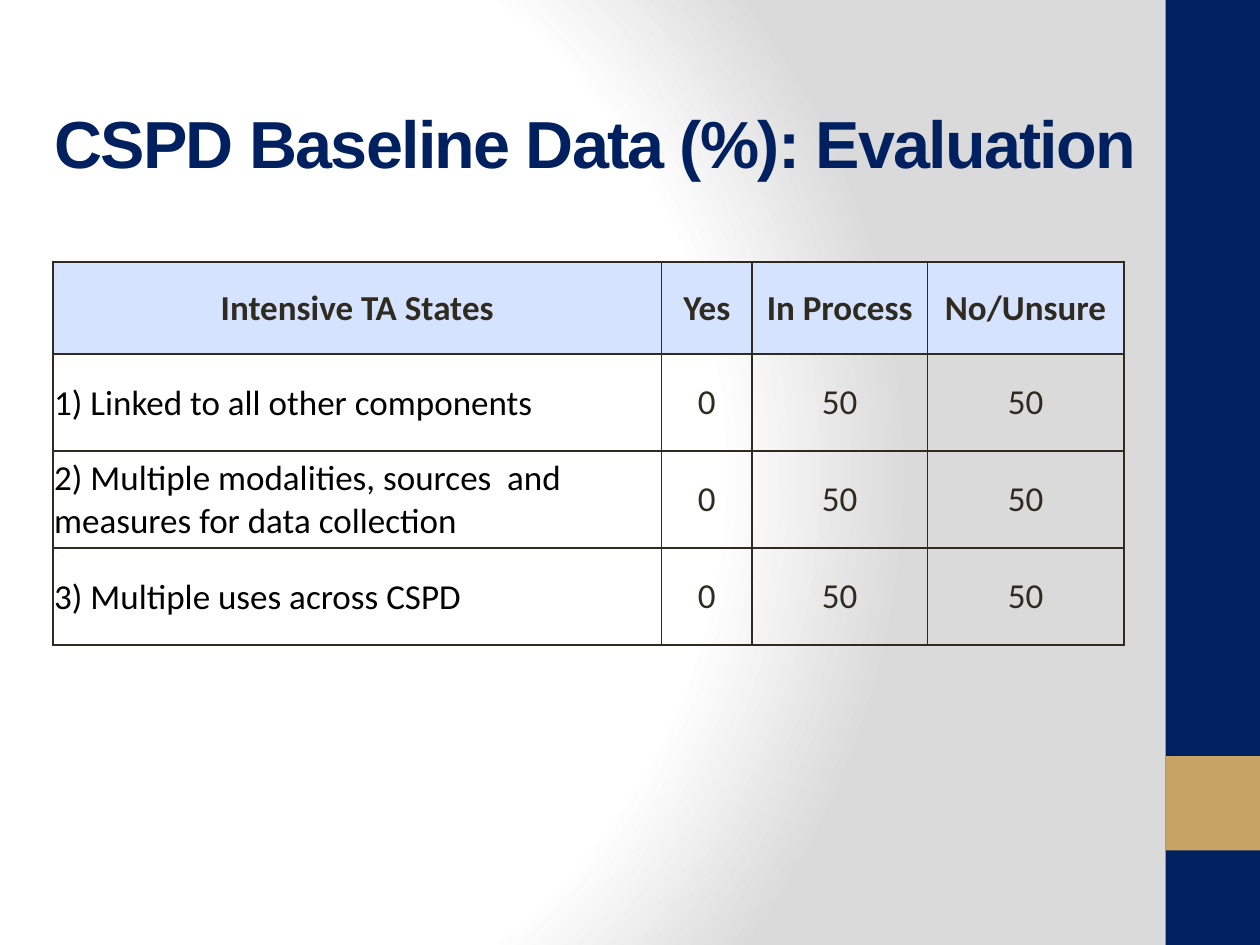
import pptx
import pptx.dml.color
import pptx.enum.shapes
import pptx.enum.text
import pptx.oxml
import pptx.oxml.ns
import pptx.util

Inches, Pt = pptx.util.Inches, pptx.util.Pt
RGBColor = pptx.dml.color.RGBColor
PP_ALIGN = pptx.enum.text.PP_ALIGN
MIDDLE = pptx.enum.text.MSO_ANCHOR.MIDDLE

NAVY = RGBColor(0x00, 0x20, 0x60)
GOLD = RGBColor(0xC8, 0xA4, 0x64)
INK = RGBColor(0x2F, 0x2B, 0x20)
BLACK = RGBColor(0x00, 0x00, 0x00)
WHITE = RGBColor(0xFF, 0xFF, 0xFF)
GREY = RGBColor(0xDA, 0xDA, 0xDA)
HEADER_BLUE = RGBColor(0xD6, 0xE3, 0xFF)

NS = pptx.oxml.ns.nsdecls("a", "p")
ROWS = [
    ["Intensive TA States", "Yes", "In Process", "No/Unsure"],
    ["1) Linked to all other components", "0", "50", "50"],
    ["2) Multiple modalities, sources  and measures for data collection", "0", "50", "50"],
    ["3) Multiple uses across CSPD", "0", "50", "50"],
]


class SlideBuilder:
    title_font = "Arial"
    table_font = "Calibri"

    def __init__(self, prs):
        self.slide = prs.slides.add_slide(prs.slide_layouts[5])

    def background(self, stops):
        """Fill the slide with a circular gradient of (percent, colour) stops."""
        gs = "".join(
            f'<a:gs pos="{pos * 1000}"><a:srgbClr val="{color}"/></a:gs>'
            for pos, color in stops
        )
        bg = pptx.oxml.parse_xml(
            f'<p:bg {NS}><p:bgPr><a:gradFill rotWithShape="1"><a:gsLst>{gs}</a:gsLst>'
            '<a:path path="circle"><a:fillToRect l="20000" t="50000" r="100000" b="50000"/>'
            "</a:path></a:gradFill><a:effectLst/></p:bgPr></p:bg>"
        )
        self.slide.element.cSld.insert(0, bg)

    def bar(self, left, top, width, height, color):
        sp = self.slide.shapes.add_shape(
            pptx.enum.shapes.MSO_SHAPE.RECTANGLE,
            Inches(left), Inches(top), Inches(width), Inches(height))
        sp.shadow.inherit = False
        sp.fill.solid()
        sp.fill.fore_color.rgb = color
        sp.line.fill.background()

    def title(self, text, left, top, width, height):
        sp = self.slide.shapes.title
        sp.left, sp.top = Inches(left), Inches(top)
        sp.width, sp.height = Inches(width), Inches(height)
        tf = sp.text_frame
        tf.text = text
        tf.vertical_anchor = MIDDLE
        tf.auto_size = pptx.enum.text.MSO_AUTO_SIZE.NONE
        p = tf.paragraphs[0]
        p.alignment = PP_ALIGN.LEFT
        self.style(p, self.title_font, 38, NAVY, True)
        p.runs[0].font._element.set("spc", "-100")

    def style(self, p, name, size, color, bold):
        p.font.name, p.font.size, p.font.bold = name, Pt(size), bold
        p.font.color.rgb = color

    def table(self, rows, left, top, widths, heights):
        table = self.slide.shapes.add_table(
            len(rows), len(widths), Inches(left), Inches(top),
            Inches(sum(widths)), Inches(sum(heights))).table
        table.first_row = table.horz_banding = False
        for column, width in zip(table.columns, widths):
            column.width = Inches(width)
        for row, height in zip(table.rows, heights):
            row.height = Inches(height)
        for i, row in enumerate(rows):
            for j, text in enumerate(row):
                self.cell(table.cell(i, j), text, header=i == 0, label=i > 0 and j == 0)

    def cell(self, cell, text, header, label):
        cell.text = text
        cell.vertical_anchor = MIDDLE
        p = cell.text_frame.paragraphs[0]
        p.alignment = PP_ALIGN.LEFT if label else PP_ALIGN.CENTER
        self.style(p, self.table_font, 20, BLACK if label else INK, header)
        if label:
            cell.margin_left = cell.margin_right = cell.margin_top = Inches(0.01)
            cell.margin_bottom = 0
        if header:
            cell.fill.solid()
            cell.fill.fore_color.rgb = HEADER_BLUE
        else:
            cell.fill.background()
        self.borders(cell)

    def borders(self, cell):
        tcPr = cell._tc.get_or_add_tcPr()
        for i, side in enumerate("LRTB"):
            tcPr.insert(i, pptx.oxml.parse_xml(
                f'<a:ln{side} {NS} w="{Pt(1)}"><a:solidFill>'
                f'<a:srgbClr val="{INK}"/></a:solidFill></a:ln{side}>'))


def main():
    prs = pptx.Presentation()
    prs.slide_width, prs.slide_height = Inches(10), Inches(7.5)
    s = SlideBuilder(prs)
    s.background([(0, WHITE), (75, WHITE), (100, GREY)])
    s.bar(9.25, 0, 0.75, 7.5, NAVY)
    s.bar(9.25, 6, 0.75, 0.75, GOLD)
    s.title("CSPD Baseline Data (%): Evaluation", 0.33, 0.5, 8.92, 1.25)
    s.table(ROWS, 0.42, 2.08, [4.83, 0.72, 1.39, 1.56], [0.73] + [0.77] * 3)
    prs.save("out.pptx")


if __name__ == "__main__":
    main()
